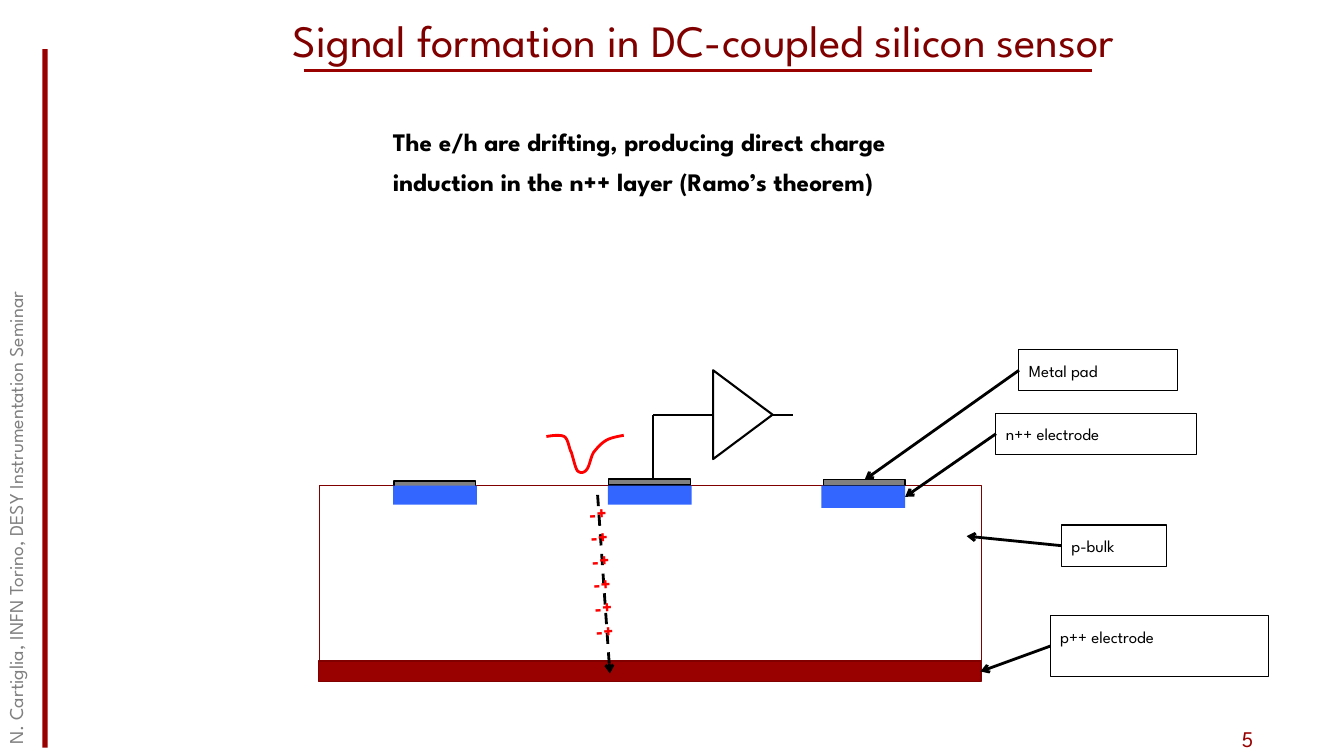
from dataclasses import dataclass

import pptx
import pptx.dml.color
import pptx.enum.dml
import pptx.enum.shapes
import pptx.enum.text
import pptx.oxml
import pptx.oxml.ns
import pptx.util

Cm, Pt = pptx.util.Cm, pptx.util.Pt
RGBColor = pptx.dml.color.RGBColor
SHAPE = pptx.enum.shapes.MSO_SHAPE
ANCHOR = pptx.enum.text.MSO_ANCHOR
ALIGN = pptx.enum.text.PP_ALIGN

FONT = "League Spartan"
RED = RGBColor(0x99, 0x00, 0x00)
MAROON = RGBColor(0x80, 0x00, 0x00)
SIGNAL = RGBColor(0xFF, 0x00, 0x00)
BLUE = RGBColor(0x33, 0x66, 0xFF)
GREY = RGBColor(0x80, 0x80, 0x80)
BLACK = RGBColor(0x00, 0x00, 0x00)
WHITE = RGBColor(0xFF, 0xFF, 0xFF)


@dataclass
class Strip:
    pad_left: float
    pad_top: float
    implant_left: float
    implant_height: float


@dataclass
class Label:
    text: str
    left: float
    top: float
    width: float
    height: float
    target: tuple[float, float]


STRIPS = [
    Strip(9.93, 12.12, 9.91, 0.48),
    Strip(15.34, 12.07, 15.32, 0.48),
    Strip(20.75, 12.09, 20.7, 0.56),
]
LABELS = [
    Label("Metal pad", 25.68, 8.81, 3.99, 1.04, (21.79, 12.09)),
    Label("n++ electrode", 25.1, 10.41, 5.05, 1.04, (22.81, 12.52)),
    Label("p-bulk", 26.75, 13.23, 2.64, 1.04, (24.36, 13.51)),
    Label("p++ electrode", 26.47, 15.52, 5.51, 1.52, (24.71, 16.92)),
]
# Start point, then two control points and an end point per curve
PULSE = [
    (13.77, 11.0),
    (13.94, 10.97), (14.12, 10.95), (14.22, 11.0),
    (14.33, 11.07), (14.33, 11.28), (14.4, 11.4),
    (14.45, 11.56), (14.5, 11.79), (14.55, 11.86),
    (14.63, 11.94), (14.73, 11.91), (14.78, 11.84),
    (14.86, 11.76), (14.88, 11.53), (14.96, 11.4),
    (15.04, 11.3), (15.14, 11.18), (15.27, 11.1),
    (15.39, 11.02), (15.72, 10.97), (15.72, 10.97),
]

prs = pptx.Presentation()
prs.slide_width, prs.slide_height = Cm(33.87), Cm(19.05)
s = prs.slides.add_slide(prs.slide_layouts[6])


def add_box(left: float, top: float, width: float, height: float,
            fill: RGBColor | None = None, line: RGBColor | None = None,
            weight: float = 1, kind=SHAPE.RECTANGLE):
    sp = s.shapes.add_shape(kind, Cm(left), Cm(top), Cm(width), Cm(height))
    sp.shadow.inherit = False
    if fill is None:
        sp.fill.background()
    else:
        sp.fill.solid()
        sp.fill.fore_color.rgb = fill
    if line is None:
        sp.line.fill.background()
    else:
        sp.line.color.rgb = line
        sp.line.width = Pt(weight)
    return sp


def add_line(start: tuple[float, float], end: tuple[float, float],
             color: RGBColor = BLACK, weight: float = 2,
             arrow: bool = False, dashed: bool = False) -> None:
    sp = s.shapes.add_connector(pptx.enum.shapes.MSO_CONNECTOR.STRAIGHT,
                                *map(Cm, start + end))
    sp.line.color.rgb = color
    sp.line.width = Pt(weight)
    if dashed:
        sp.line.dash_style = pptx.enum.dml.MSO_LINE.DASH
    if arrow:
        ln = sp.line._get_or_add_ln()
        tail = pptx.oxml.parse_xml(
            f'<a:tailEnd {pptx.oxml.ns.nsdecls("a")} type="arrow"/>')
        ln.append(tail)
    sp._element.spPr.append(pptx.oxml.parse_xml(
        f'<a:effectLst {pptx.oxml.ns.nsdecls("a")}/>'))


def write(sp, text: str, size: float, color: RGBColor = BLACK,
          bold: bool = False, align=ALIGN.LEFT, anchor=ANCHOR.TOP,
          spacing: float = 1.0) -> None:
    tf = sp.text_frame
    tf.word_wrap = True
    tf.vertical_anchor = anchor
    tf.text = text
    for p in tf.paragraphs:
        p.alignment = align
        p.line_spacing = spacing
        for r in p.runs:
            r.font.name = FONT
            r.font.size = Pt(size)
            r.font.bold = bold
            r.font.color.rgb = color


def add_text(text: str, left: float, top: float, width: float, height: float,
             rotation: float = 0, **style) -> None:
    sp = s.shapes.add_textbox(Cm(left), Cm(top), Cm(width), Cm(height))
    sp.rotation = rotation
    write(sp, text, **style)


def add_curve(points: list[tuple[float, float]], color: RGBColor,
              weight: float, steps: int = 8) -> None:
    vertices = []
    for i in range(0, len(points) - 1, 3):
        a, b, c, d = points[i:i + 4]
        for n in range(1, steps + 1):
            t = n / steps
            u = 1 - t
            vertices.append(tuple(
                Cm(u**3 * a[k] + 3 * u * u * t * b[k]
                   + 3 * u * t * t * c[k] + t**3 * d[k]) for k in (0, 1)))
    builder = s.shapes.build_freeform(*map(Cm, points[0]))
    builder.add_line_segments(vertices, close=False)
    sp = builder.convert_to_shape()
    sp.shadow.inherit = False
    sp.fill.background()
    sp.line.color.rgb = color
    sp.line.width = Pt(weight)


# Slide frame
add_box(1.07, 1.24, 0.13, 17.6, fill=RED)
add_line((7.65, 1.78), (27.51, 1.78), RED)
add_text("5", 31.04, 18.16, 2.06, 0.89, size=16, color=RED,
         anchor=ANCHOR.MIDDLE)
add_text("N. Cartiglia, INFN Torino, DESY Instrumentation Seminar",
         -8.86, 9.22, 18.62, 0.97, rotation=270, size=14, color=GREY)

# Title and statement
add_text("Signal formation in DC-coupled silicon sensor",
         2.41, -0.05, 30.68, 1.85, size=32, color=MAROON,
         align=ALIGN.CENTER, anchor=ANCHOR.BOTTOM)
add_text("The e/h are drifting, producing direct charge induction in the "
         "n++ layer (Ramo’s theorem)",
         9.65, 2.84, 15.4, 2.16, size=18, bold=True, spacing=1.3)

# Sensor: bulk, back electrode, pads and implants
add_box(8.05, 12.24, 16.69, 4.9, line=MAROON)
add_box(8.03, 16.66, 16.69, 0.51, fill=RED, line=MAROON)
for strip in STRIPS:
    add_box(strip.pad_left, strip.pad_top, 2.06, 0.15, GREY, BLACK)
    add_box(strip.implant_left, 12.24, 2.11, strip.implant_height, BLUE)

# Amplifier
add_line((16.46, 10.46), (19.99, 10.46), weight=1.5)
add_line((16.46, 10.46), (16.46, 12.07), weight=1.5)
amplifier = add_box(17.6, 9.7, 2.24, 1.5, WHITE, BLACK, 1.5,
                    SHAPE.ISOSCELES_TRIANGLE)
amplifier.rotation = 90

# Labels with pointers
for label in LABELS:
    sp = add_box(label.left, label.top, label.width, label.height,
                 line=BLACK, weight=0.75)
    write(sp, label.text, size=12, spacing=1.3)
    add_line((label.left, label.top + label.height / 2), label.target,
             arrow=True)

# Signal pulse and particle track with its charge pairs
add_curve(PULSE, SIGNAL, 2)
add_line((15.06, 12.47), (15.37, 16.97), arrow=True, dashed=True)
add_text("\n".join(["-+"] * 6), 14.68, 12.5, 1.09, 3.84, rotation=356.7,
         size=14, color=SIGNAL, bold=True)

prs.save("out.pptx")
